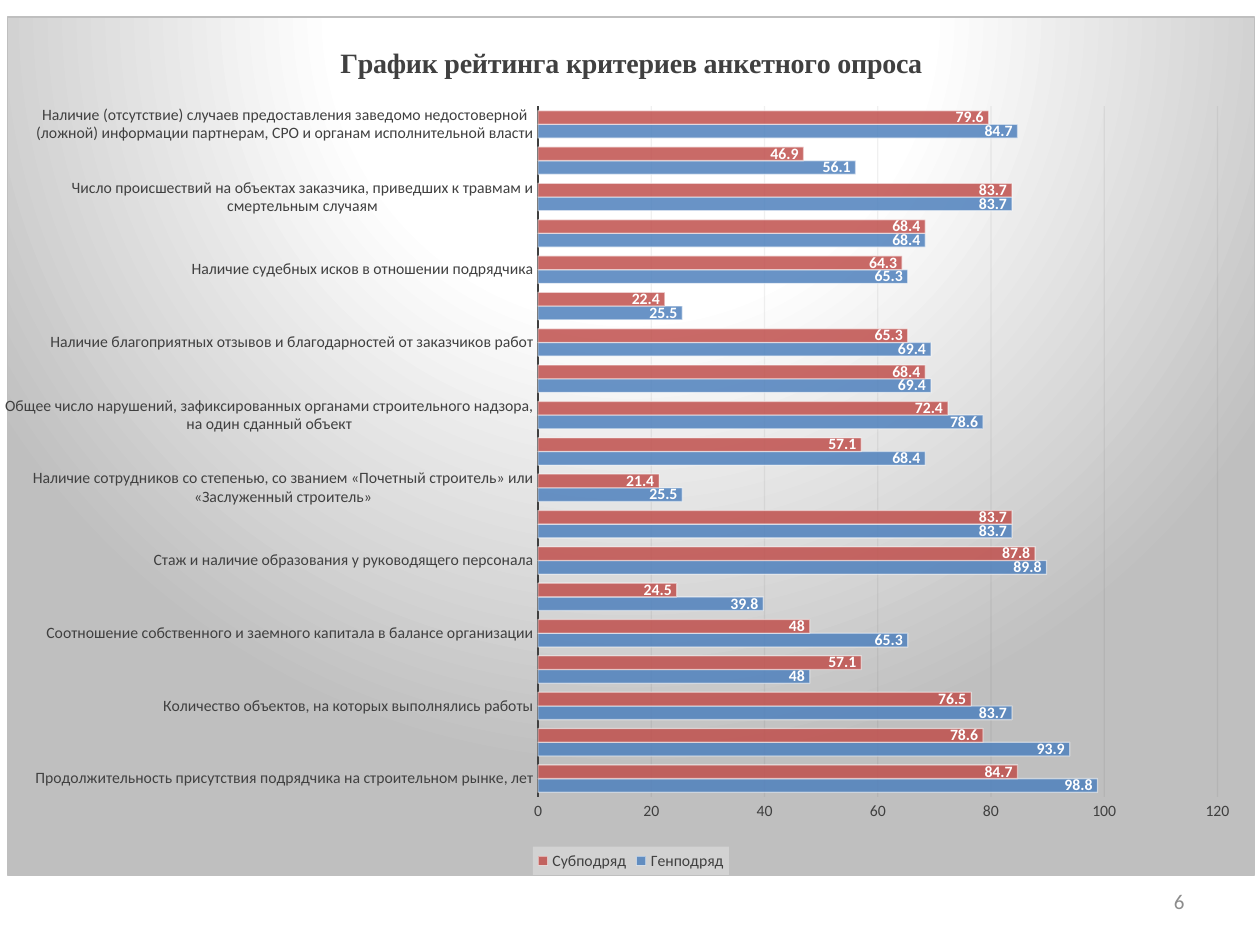
from typing import NamedTuple

from pptx import Presentation
from pptx.chart.data import CategoryChartData
from pptx.dml.color import RGBColor
from pptx.enum.chart import XL_CHART_TYPE as ChartType
from pptx.enum.chart import XL_LABEL_POSITION as LabelPosition
from pptx.enum.chart import XL_LEGEND_POSITION as LegendPosition
from pptx.enum.chart import XL_TICK_MARK as TickMark
from pptx.enum.text import MSO_ANCHOR, PP_ALIGN
from pptx.oxml import parse_xml
from pptx.oxml.ns import nsdecls, qn
from pptx.util import Inches, Pt

WHITE = RGBColor(0xFF, 0xFF, 0xFF)
BLACK = RGBColor(0, 0, 0)
DARK = RGBColor(0x40, 0x40, 0x40)
GRID = RGBColor(0x0D, 0x0D, 0x0D)
NUMBER_GRAY = RGBColor(0x8C, 0x8C, 0x8C)
BLUE = RGBColor(0x4F, 0x81, 0xBD)
RED = RGBColor(0xC0, 0x50, 0x4D)

TITLE = "График рейтинга критериев анкетного опроса"


class Criterion(NamedTuple):
    """Ratings of one criterion; every second one has no label on the axis."""
    general: float
    sub: float
    name: str = ""


class SeriesStyle(NamedTuple):
    name: str
    field: str
    color: RGBColor


SERIES = [
    SeriesStyle("Генподряд", "general", BLUE),
    SeriesStyle("Субподряд", "sub", RED),
]

CRITERIA = [
    Criterion(98.8, 84.7, "Продолжительность присутствия подрядчика на строительном рынке, лет"),
    Criterion(93.9, 78.6),
    Criterion(83.7, 76.5, "Количество объектов, на которых выполнялись работы"),
    Criterion(48, 57.1),
    Criterion(65.3, 48, "Соотношение собственного и заемного капитала в балансе организации"),
    Criterion(39.8, 24.5),
    Criterion(89.8, 87.8, "Стаж и наличие образования у руководящего персонала"),
    Criterion(83.7, 83.7),
    Criterion(25.5, 21.4, "Наличие сотрудников со степенью, со званием «Почетный строитель» "
                          "или «Заслуженный строитель»"),
    Criterion(68.4, 57.1),
    Criterion(78.6, 72.4, "Общее число нарушений, зафиксированных органами строительного надзора, "
                          "на один сданный объект"),
    Criterion(69.4, 68.4),
    Criterion(69.4, 65.3, "Наличие благоприятных отзывов и благодарностей от заказчиков работ"),
    Criterion(25.5, 22.4),
    Criterion(65.3, 64.3, "Наличие судебных исков в отношении подрядчика"),
    Criterion(68.4, 68.4),
    Criterion(83.7, 83.7, "Число происшествий на объектах заказчика, приведших к травмам "
                          "и смертельным случаям"),
    Criterion(56.1, 46.9),
    Criterion(84.7, 79.6, "Наличие (отсутствие) случаев предоставления заведомо недостоверной "
                          "(ложной) информации партнерам, СРО и органам исполнительной власти"),
]

CHART_FILL = f"""<c:spPr {nsdecls('c', 'a')}>
  <a:gradFill><a:gsLst>
    <a:gs pos="0"><a:srgbClr val="FFFFFF"/></a:gs>
    <a:gs pos="39000"><a:srgbClr val="FFFFFF"/></a:gs>
    <a:gs pos="100000"><a:srgbClr val="BFBFBF"/></a:gs>
  </a:gsLst><a:path path="circle">
    <a:fillToRect l="50000" t="-80000" r="50000" b="180000"/>
  </a:path></a:gradFill>
  <a:ln w="9525"><a:solidFill><a:srgbClr val="BFBFBF"/></a:solidFill></a:ln>
</c:spPr>"""

LEGEND_FILL = f"""<c:spPr {nsdecls('c', 'a')}>
  <a:solidFill><a:srgbClr val="F2F2F2"><a:alpha val="39000"/></a:srgbClr></a:solidFill>
</c:spPr>"""


def set_font(font, size: float, color: RGBColor, name: str = "Calibri", bold: bool = False) -> None:
    values = {"size": Pt(size), "name": name, "bold": bold}
    for attribute, value in values.items():
        setattr(font, attribute, value)
    font.color.rgb = color


def set_alpha(properties, percent: int) -> None:
    """Make the first colour found inside an element partly transparent."""
    color = next(properties.iter(qn("a:srgbClr")))
    color.append(parse_xml(f'<a:alpha {nsdecls("a")} val="{percent * 1000}"/>'))


def set_line(line, color: RGBColor, width: float) -> None:
    line.color.rgb = color
    line.width = Pt(width)


def add_fill(element, fill_xml: str) -> None:
    """Put shape properties just before the text properties, as the schema asks."""
    element.find(qn("c:txPr")).addprevious(parse_xml(fill_xml))


def set_layout(element, index: int, target: str = "", **fractions: float) -> None:
    """Place a chart part by hand, in fractions of the chart's size."""
    for old_layout in element.findall(qn("c:layout")):
        element.remove(old_layout)
    inner = f'<c:layoutTarget val="{target}"/>' if target else ""
    modes = "".join(f'<c:{key}Mode val="edge"/>' for key in "xy")
    sizes = "".join(f'<c:{key} val="{value}"/>' for key, value in fractions.items())
    element.insert(index, parse_xml(
        f'<c:layout {nsdecls("c")}><c:manualLayout>{inner}{modes}{sizes}'
        f'</c:manualLayout></c:layout>'))


def style_series(series, style: SeriesStyle) -> None:
    series.format.fill.solid()
    series.format.fill.fore_color.rgb = style.color
    set_line(series.format.line, WHITE, 0.75)
    properties = series.format.fill._xPr
    set_alpha(properties, 85)
    set_alpha(properties.find(qn("a:ln")), 50)
    labels = series.data_labels
    labels.show_value = True
    labels.position = LabelPosition.INSIDE_END
    set_font(labels.font, 9, WHITE, bold=True)


def style_axes(chart) -> None:
    category_axis, value_axis = chart.category_axis, chart.value_axis
    for axis in (category_axis, value_axis):
        axis.major_tick_mark = axis.minor_tick_mark = TickMark.NONE
        set_font(axis.tick_labels.font, 9, DARK)
    set_line(category_axis.format.line, DARK, 1.5)
    value_axis.format.line.fill.background()
    value_axis.minimum_scale, value_axis.maximum_scale, value_axis.major_unit = 0, 120, 20
    value_axis.has_major_gridlines = True
    set_line(value_axis.major_gridlines.format.line, GRID, 0.75)
    set_alpha(value_axis._element.find(qn("c:majorGridlines")), 5)


def add_rating_chart(slide) -> None:
    data = CategoryChartData()
    data.categories = [criterion.name for criterion in CRITERIA]
    for style in SERIES:
        data.add_series(style.name, [getattr(criterion, style.field) for criterion in CRITERIA])
    chart = slide.shapes.add_chart(
        ChartType.BAR_CLUSTERED, Inches(0.04), Inches(0.13), Inches(9.92), Inches(6.82), data).chart
    set_font(chart.font, 10, BLACK)
    add_fill(chart._chartSpace, CHART_FILL)

    title = chart.chart_title
    title.text_frame.text = TITLE
    set_font(title.text_frame.paragraphs[0].runs[0].font, 16, DARK, "Times New Roman", True)
    title.include_in_layout = False
    set_layout(title._element, 1, x=0.263, y=0.027)

    plot = chart.plots[0]
    plot.gap_width, plot.overlap = 65, 0
    plot.vary_by_categories = False
    for series, style in zip(plot.series, SERIES):
        style_series(series, style)
    style_axes(chart)
    plot_area = chart._chartSpace.chart.plotArea
    set_layout(plot_area, 0, "inner", x=0.4255, y=0.104, w=0.545, h=0.805)

    chart.has_legend = True
    legend = chart.legend
    legend.position = LegendPosition.BOTTOM
    legend.include_in_layout = False
    set_font(legend.font, 9, DARK)
    add_fill(legend._element, LEGEND_FILL)


def add_page_number(slide, number: str) -> None:
    frame = slide.shapes.add_textbox(Inches(7.17), Inches(6.95), Inches(2.33), Inches(0.4)).text_frame
    frame.word_wrap = True
    frame.vertical_anchor = MSO_ANCHOR.MIDDLE
    paragraph = frame.paragraphs[0]
    paragraph.alignment = PP_ALIGN.RIGHT
    run = paragraph.add_run()
    run.text = number
    set_font(run.font, 12, NUMBER_GRAY)


def main() -> None:
    presentation = Presentation()
    presentation.slide_width, presentation.slide_height = Inches(10), Inches(7.5)
    slide = presentation.slides.add_slide(presentation.slide_layouts[6])
    add_page_number(slide, "6")
    add_rating_chart(slide)
    presentation.save("out.pptx")


if __name__ == "__main__":
    main()
